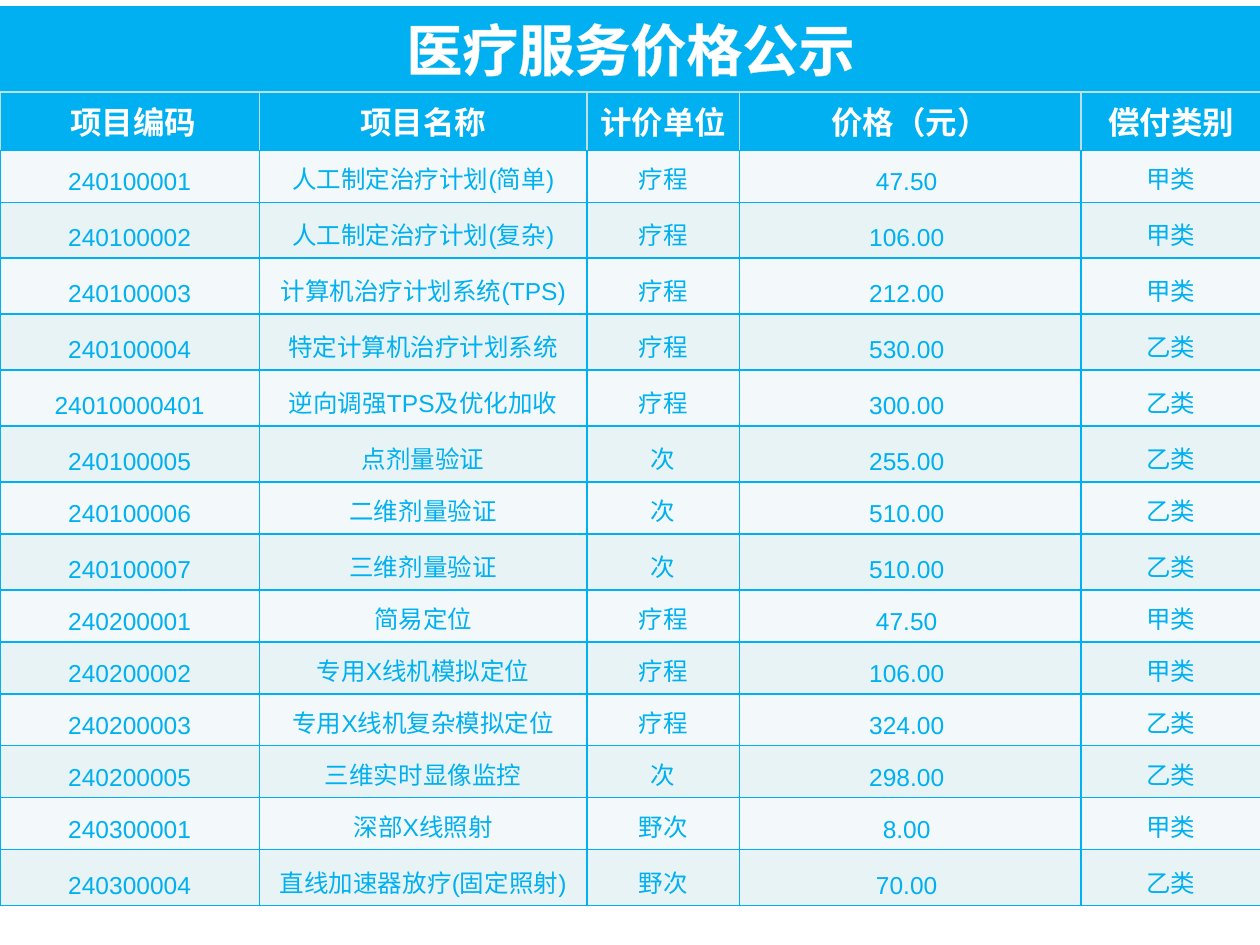
"""Build a price list slide for medical services as one table."""
import pptx
import pptx.util
import pptx.dml.color
import pptx.enum.text
import pptx.oxml.ns
from lxml import etree

Pt = pptx.util.Pt
HUES = {
    "main": "00B0F0", "white": "FFFFFF", "edge": "BBE0E3",
    "glow": "D9EDEE", "pale": "F3F9FA", "tint": "E7F3F4",
}
COLS = [148.2, 187.2, 87.1, 195.2, 103]
LOW, TALL = 29.7, 32
TITLE = "医疗服务价格公示"
HEADS = [" 项目编码", "项目名称", "计价单位", "价格（元）", "偿付类别"]
ITEMS = [
    ("240100001", "人工制定治疗计划(简单)", "疗程", "47.50 ", "甲类", LOW),
    ("240100002", "人工制定治疗计划(复杂)", "疗程", "106.00 ", "甲类", TALL),
    ("240100003", "计算机治疗计划系统(TPS)", "疗程", "212.00 ", "甲类", TALL),
    ("240100004", "特定计算机治疗计划系统", "疗程", "530.00 ", "乙类", TALL),
    ("24010000401", "逆向调强TPS及优化加收", "疗程", "300.00 ", "乙类", TALL),
    ("240100005", "点剂量验证", "次", "255.00 ", "乙类", TALL),
    ("240100006", "二维剂量验证", "次", "510.00 ", "乙类", LOW),
    ("240100007", "三维剂量验证", "次", "510.00 ", "乙类", TALL),
    ("240200001", "简易定位", "疗程", "47.50 ", "甲类", LOW),
    ("240200002", "专用X线机模拟定位", "疗程", "106.00 ", "甲类", LOW),
    ("240200003", "专用X线机复杂模拟定位", "疗程", "324.00 ", "乙类", LOW),
    ("240200005", "三维实时显像监控", "次", "298.00 ", "乙类", LOW),
    ("240300001", "深部X线照射", "野次", "8.00 ", "甲类", LOW),
    ("240300004", "直线加速器放疗(固定照射)", "野次", "70.00 ", "乙类", TALL),
]


def make_line(tag, hue, width):
    """Return a solid line element."""
    name = pptx.oxml.ns.qn
    line = etree.Element(name(tag), w=str(Pt(width)))
    fill = etree.SubElement(line, name("a:solidFill"))
    etree.SubElement(fill, name("a:srgbClr"), val=HUES[hue])
    return line


def dress(cell, fill, light=""):
    """Fill a cell and rule its sides, those named in light in the edge hue."""
    cell.fill.solid()
    cell.fill.fore_color.rgb = pptx.dml.color.RGBColor.from_string(HUES[fill])
    props = cell._tc.get_or_add_tcPr()
    for i, side in enumerate("LRTB"):
        hue = "edge" if side in light else "main"
        props.insert(i, make_line("a:ln" + side, hue, 1))


def write(cell, text, size=14, hue="main", bold=False, space=None, rim=None):
    """Write centred text in a cell."""
    para = cell.text_frame.paragraphs[0]
    para.alignment = pptx.enum.text.PP_ALIGN.CENTER
    para.line_spacing = space
    run = para.add_run()
    run.text = text
    font = run.font
    font.name, font.size, font.bold = "Arial", Pt(size), bold
    font.color.rgb = pptx.dml.color.RGBColor.from_string(HUES[hue])
    if rim:
        font._element.insert(0, make_line("a:ln", rim, 0.8))


def add_grid(slide):
    """Add the bare table with its column widths and row heights."""
    highs = [43.2, LOW] + [item[-1] for item in ITEMS]
    shape = slide.shapes.add_table(
        len(highs), len(COLS), Pt(0), Pt(3.6), Pt(sum(COLS)), Pt(sum(highs)))
    table = shape.table
    table.first_row = table.horz_banding = False
    for col, width in zip(table.columns, COLS):
        col.width = Pt(width)
    for row, high in zip(table.rows, highs):
        row.height = Pt(high)
    return table


def fill_top(table):
    """Fill the merged title row and the heading row."""
    title = table.cell(0, 0)
    title.merge(table.cell(0, len(COLS) - 1))
    for cell in table.rows[0].cells:
        dress(cell, "main", "B")
    title.vertical_anchor = pptx.enum.text.MSO_ANCHOR.MIDDLE
    write(title, TITLE, size=32, hue="white", bold=True, space=0.9, rim="glow")
    for cell, text in zip(table.rows[1].cells, HEADS):
        dress(cell, "main", "LRT")
        write(cell, text, size=18, hue="white", bold=True)


def fill_items(table):
    """Fill the price rows in two alternating tints."""
    for i, item in enumerate(ITEMS):
        for cell, text in zip(table.rows[i + 2].cells, item):
            dress(cell, "tint" if i % 2 else "pale")
            cell.vertical_anchor = pptx.enum.text.MSO_ANCHOR.BOTTOM
            cell.margin_left = cell.margin_right = cell.margin_top = Pt(0.7)
            cell.margin_bottom = Pt(3.6)
            write(cell, text)


def main():
    """Build and save the slide."""
    deck = pptx.Presentation()
    deck.slide_width, deck.slide_height = Pt(720), Pt(540)
    slide = deck.slides.add_slide(deck.slide_layouts[6])
    table = add_grid(slide)
    fill_top(table)
    fill_items(table)
    deck.save("out.pptx")


if __name__ == "__main__":
    main()
